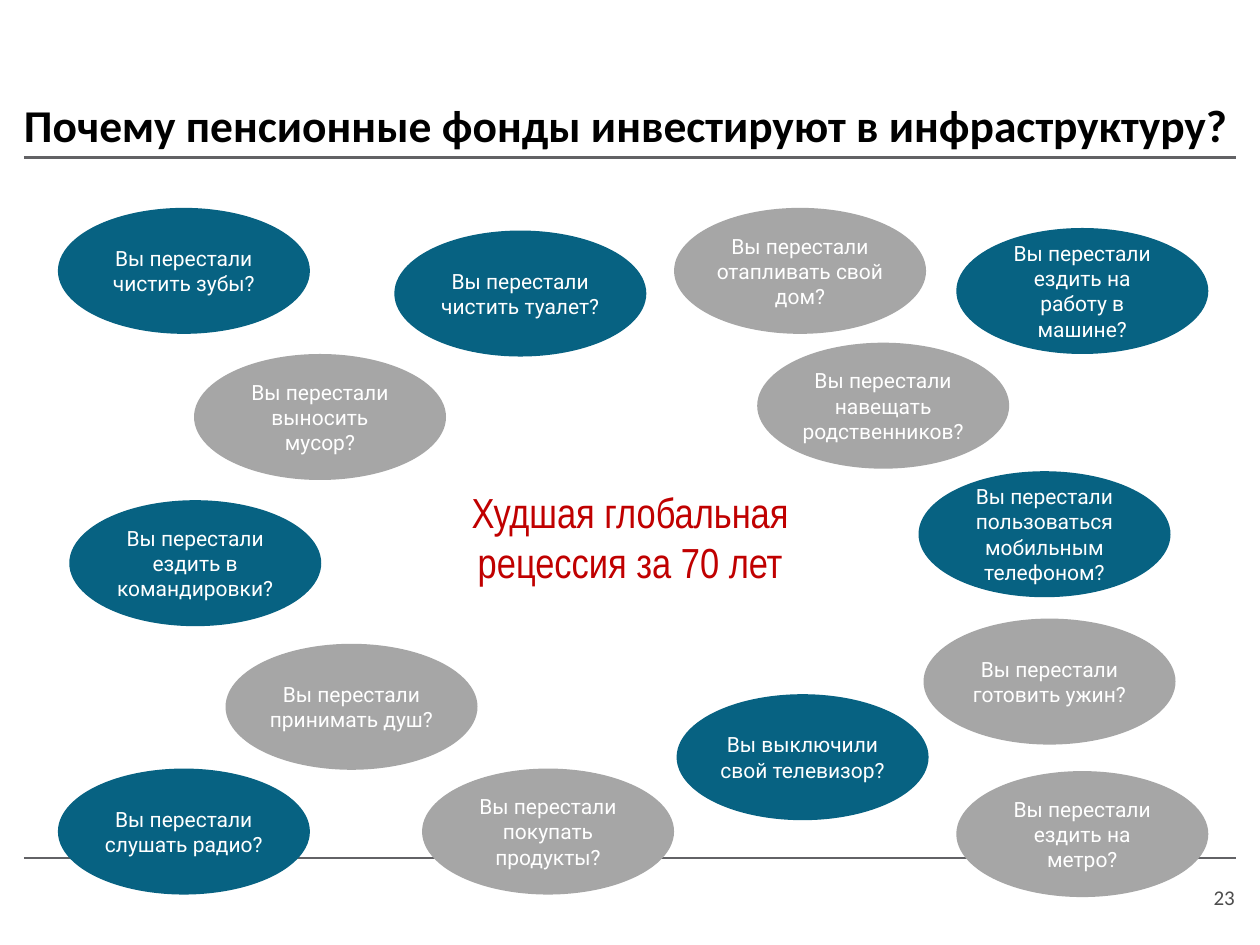
import pptx
import pptx.util
import pptx.dml.color
import pptx.enum.shapes
import pptx.enum.text
import pptx.oxml.ns
import lxml.etree

Inches = pptx.util.Inches
Align = pptx.enum.text.PP_ALIGN
Anchor = pptx.enum.text.MSO_ANCHOR

TITLE = "Почему пенсионные фонды инвестируют в инфраструктуру?"
CENTRE = "Худшая глобальная рецессия за 70 лет"
PAGE = "23"

# left, top, fill, question
OVALS = [
    (1.54, 2.81, "grey", "Вы перестали выносить мусор?"),
    (0.55, 3.97, "teal", "Вы перестали ездить в командировки?"),
    (3.13, 1.83, "teal", "Вы перестали чистить туалет?"),
    (1.79, 5.11, "grey", "Вы перестали принимать душ?"),
    (0.46, 6.10, "teal", "Вы перестали слушать радио?"),
    (3.35, 6.10, "grey", "Вы перестали покупать продукты?"),
    (7.59, 6.12, "grey", "Вы перестали ездить на метро?"),
    (0.46, 1.65, "teal", "Вы перестали чистить зубы?"),
    (5.37, 5.51, "teal", "Вы выключили свой телевизор?"),
    (7.59, 1.81, "teal", "Вы перестали ездить на работу в машине?"),
    (5.35, 1.65, "grey", "Вы перестали отапливать свой дом?"),
    (7.29, 3.74, "teal", "Вы перестали пользоваться мобильным телефоном?"),
    (7.33, 4.91, "grey", "Вы перестали готовить ужин?"),
    (6.01, 2.72, "grey", "Вы перестали навещать родственников?"),
]
OVAL = (2, 1)
EDGE = 0.19
WIDE = 10 - 2 * EDGE
RULES = [(6.81, 1), (1.25, 1.5)]  # top, weight

THEME = {
    "teal": "076282",
    "grey": "A6A6A6",
    "rule": "626265",
    "title": dict(name="Calibri", size=26, bold=True, color="000000"),
    "centre": dict(name="Arial Narrow", size=24, bold=False, color="C00000"),
    "oval": dict(name="Roboto", size=12, bold=False, color="FFFFFF"),
    "page": dict(name="Calibri", size=12, bold=False, color="4D4D4D"),
}


def rgb(code):
    return pptx.dml.color.RGBColor.from_string(code)


def place(shape, *box):
    for key, val in zip(("left", "top", "width", "height"), box):
        setattr(shape, key, Inches(val))


def write(shape, text, style, align, anchor, inset=(0.1, 0.05)):
    """Fill a shape with one paragraph; inset is (sides, top and bottom)."""
    side, end = map(Inches, inset)
    frame = shape.text_frame
    form = dict(word_wrap=True, vertical_anchor=anchor,
                auto_size=pptx.enum.text.MSO_AUTO_SIZE.NONE,
                margin_left=side, margin_right=side,
                margin_top=end, margin_bottom=end)
    for key, val in form.items():
        setattr(frame, key, val)
    para = frame.paragraphs[0]
    para.alignment = align
    run = para.add_run()
    run.text = text
    look = dict(THEME[style])
    run.font.color.rgb = rgb(look.pop("color"))
    look["size"] = pptx.util.Pt(look["size"])
    for key, val in look.items():
        setattr(run.font, key, val)


def rule(slide, top, weight):
    line = slide.shapes.add_connector(
        pptx.enum.shapes.MSO_CONNECTOR.STRAIGHT,
        *map(Inches, (EDGE, top, EDGE + WIDE, top)))
    line.line.color.rgb = rgb(THEME["rule"])
    line.line.width = pptx.util.Pt(weight)
    lxml.etree.SubElement(line._element.spPr, pptx.oxml.ns.qn("a:effectLst"))


def oval(slide, left, top, fill, text):
    shape = slide.shapes.add_shape(
        pptx.enum.shapes.MSO_SHAPE.OVAL, *map(Inches, (left, top, *OVAL)))
    shape.shadow.inherit = False
    shape.fill.solid()
    shape.fill.fore_color.rgb = rgb(THEME[fill])
    shape.line.fill.background()
    write(shape, text, "oval", Align.CENTER, Anchor.MIDDLE, (0.04, 0.04))


def label(slide, box, *text):
    write(slide.shapes.add_textbox(*map(Inches, box)), *text)


def main():
    deck = pptx.Presentation()
    deck.slide_width, deck.slide_height = Inches(10), Inches(7.5)
    slide = deck.slides.add_slide(deck.slide_layouts[5])

    title = slide.shapes.title
    place(title, EDGE, 0.6, WIDE, 0.65)
    write(title, TITLE, "title", Align.LEFT, Anchor.BOTTOM, (0, 0.05))

    for top, weight in RULES:
        rule(slide, top, weight)
    label(slide, (8.89, 7.04, 0.91, 0.18), PAGE, "page",
          Align.RIGHT, Anchor.BOTTOM, (0, 0))
    label(slide, (3.49, 3.81, 3.02, 1.31), CENTRE, "centre",
          Align.CENTER, Anchor.TOP)
    for item in OVALS:
        oval(slide, *item)

    deck.save("out.pptx")


if __name__ == "__main__":
    main()
